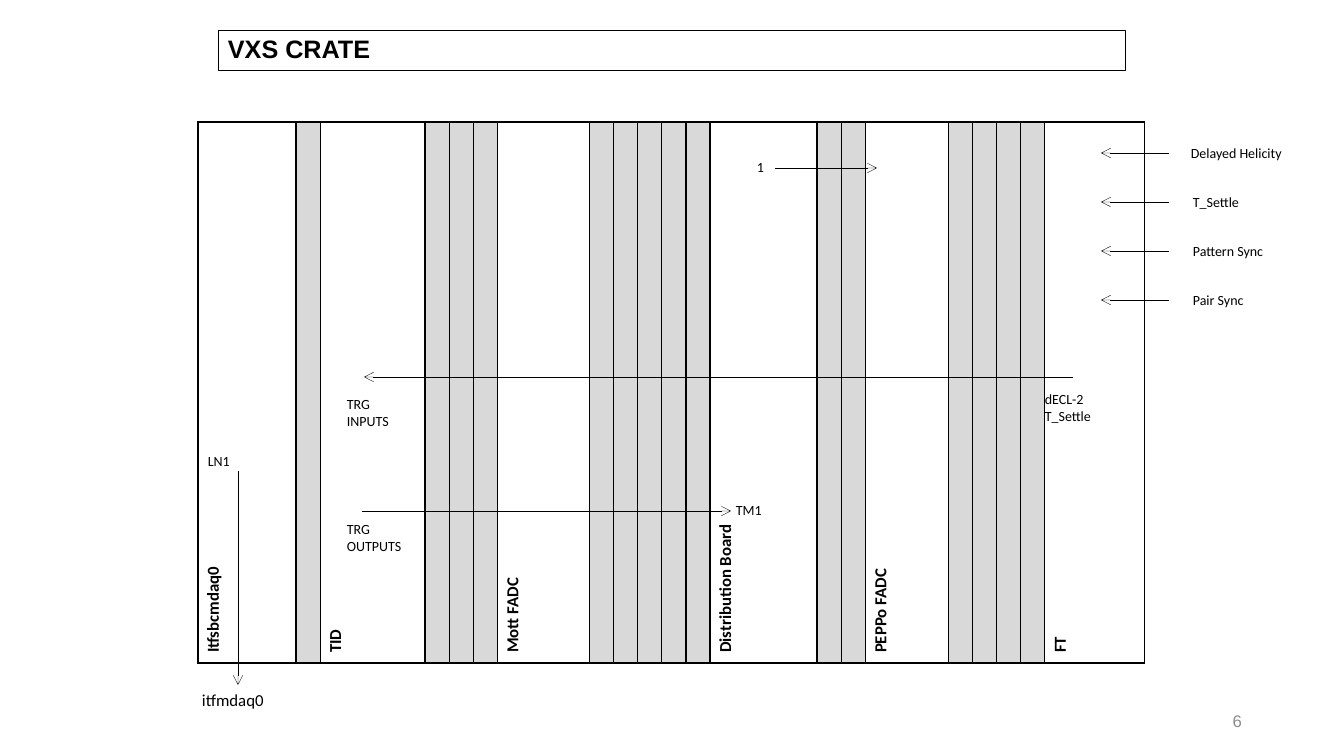
import lxml.etree
import pptx
import pptx.dml.color
import pptx.enum.shapes
import pptx.enum.text
import pptx.oxml.ns
import pptx.util

EMU_PER_PX = 914400 / 100.8
ROW_STEP = 49
SLOT_W = 24
BLACK, GREY, PAGE_GREY = "000000", "D9D9D9", "8C8C8C"
MODULES = [
    ("Itfsbcmdaq0", 98, 1),
    ("TID", 105, 3),
    ("Mott FADC", 92, 5),
    ("Distribution Board", 107, 2),
    ("PEPPo FADC", 83, 4),
    ("FT", 100, 0),
]
HELICITY_SIGNALS = ["Delayed Helicity", "T_Settle", "Pattern Sync", "Pair Sync"]


def px(n):
    """Turn pixels into EMU."""
    return pptx.util.Emu(round(n * EMU_PER_PX))


def color(value):
    """Turn a hex string into a colour."""
    return pptx.dml.color.RGBColor.from_string(value)


def sub(parent, tag, **attrs):
    """Append a DrawingML element to a parent."""
    return lxml.etree.SubElement(parent, pptx.oxml.ns.qn(tag), **attrs)


def add_run(p, text, size, bold=False, font="Calibri", hex_color=BLACK):
    """Add one formatted run to a paragraph."""
    r = p.add_run()
    r.text = text
    r.font.name = font
    r.font.size = pptx.util.Pt(size)
    r.font.bold = bold
    r.font.color.rgb = color(hex_color)


def add_label(s, x, y, w, h, *lines, size=10):
    """Place a text label with one paragraph per line."""
    tf = s.shapes.add_textbox(px(x), px(y), px(w), px(h)).text_frame
    tf.word_wrap = True
    for i, line in enumerate(lines):
        p = tf.add_paragraph() if i else tf.paragraphs[0]
        add_run(p, line, size)


def add_arrow(s, x1, y1, x2, y2):
    """Draw a thin line with an open arrowhead at its end."""
    line = s.shapes.add_connector(
        pptx.enum.shapes.MSO_CONNECTOR.STRAIGHT, px(x1), px(y1), px(x2), px(y2))
    line.line.color.rgb = color(BLACK)
    line.line.width = pptx.util.Pt(0.25)
    sub(line.line._get_or_add_ln(), "a:tailEnd", type="arrow")
    sub(line._element.spPr, "a:effectLst")


def add_title(s, x, y, w, h):
    """Draw the outlined title bar."""
    sp = s.shapes.add_shape(
        pptx.enum.shapes.MSO_SHAPE.RECTANGLE, px(x), px(y), px(w), px(h))
    sp.shadow.inherit = False
    sp.fill.background()
    sp.line.color.rgb = color(BLACK)
    sp.line.width = pptx.util.Pt(0.25)
    tf = sp.text_frame
    tf.word_wrap = True
    tf.vertical_anchor = pptx.enum.text.MSO_ANCHOR.MIDDLE
    p = tf.paragraphs[0]
    p.alignment = pptx.enum.text.PP_ALIGN.LEFT
    p.line_spacing = 0.9
    add_run(p, "VXS CRATE", 18, bold=True, font="Arial")


def style_cell(cell, label):
    """Border a cell, then name a module or shade an empty slot."""
    tcPr = cell._tc.get_or_add_tcPr()
    for side in ("a:lnL", "a:lnR", "a:lnT", "a:lnB"):
        ln = sub(tcPr, side, w=str(pptx.util.Pt(1)))
        sub(sub(ln, "a:solidFill"), "a:srgbClr", val=BLACK)
    if label:
        tcPr.set("vert", "vert270")
        cell.fill.background()
        add_run(cell.text_frame.paragraphs[0], label, 12, bold=True)
    else:
        cell.fill.solid()
        cell.fill.fore_color.rgb = color(GREY)


def add_crate(s, x, y, w, h):
    """Draw the crate as a one-row table of modules and empty slots."""
    columns = []
    for name, width, empty_slots in MODULES:
        columns += [(name, width)] + [("", SLOT_W)] * empty_slots
    table = s.shapes.add_table(1, len(columns), px(x), px(y), px(w), px(h)).table
    table.first_row = False
    table.horz_banding = False
    for i, (label, width) in enumerate(columns):
        table.columns[i].width = px(width)
        style_cell(table.cell(0, i), label)


def add_crate_wiring(s, x, y):
    """Draw the signals between modules, relative to the crate corner."""
    add_arrow(s, x + 40, y + 349, x + 40, y + 563)
    add_label(s, x, y + 326, 50, 27, "LN1")
    add_label(s, x - 6, y + 563, 116, 30, "itfmdaq0", size=12)
    add_arrow(s, x + 164, y + 389, x + 533, y + 389)
    add_label(s, x + 139, y + 394, 76, 44, "TRG OUTPUTS")
    add_label(s, x + 528, y + 375, 67, 27, "TM1")
    add_arrow(s, x + 577, y + 46, x + 679, y + 46)
    add_label(s, x + 549, y + 32, 35, 27, "1")
    add_arrow(s, x + 875, y + 255, x + 166, y + 255)
    add_label(s, x + 139, y + 269, 76, 44, "TRG", "INPUTS")
    add_label(s, x + 837, y + 264, 76, 44, "dECL-2", "T_Settle")


def add_helicity_inputs(s, x, y):
    """Stack the input signals that enter the crate from the right."""
    for i, signal in enumerate(HELICITY_SIGNALS):
        row_y = y + i * ROW_STEP
        add_arrow(s, x + 68, row_y, x, row_y)
        add_label(s, x + (82 if i else 80), row_y - 13, 116, 27, signal)


def add_page_number(s, x, y, w, h):
    """Place the right-aligned page number."""
    tf = s.shapes.add_textbox(px(x), px(y), px(w), px(h)).text_frame
    tf.word_wrap = True
    tf.vertical_anchor = pptx.enum.text.MSO_ANCHOR.MIDDLE
    p = tf.paragraphs[0]
    p.alignment = pptx.enum.text.PP_ALIGN.RIGHT
    add_run(p, "6", 12, font="Arial", hex_color=PAGE_GREY)


def main():
    """Build the slide and save it."""
    prs = pptx.Presentation()
    prs.slide_width, prs.slide_height = px(1344), px(756)
    s = prs.slides.add_slide(prs.slide_layouts[6])
    add_title(s, 218, 30, 907, 40)
    add_crate(s, 198, 122, 945, 541)
    add_crate_wiring(s, 198, 122)
    add_helicity_inputs(s, 1101, 153)
    add_page_number(s, 950, 701, 302, 40)
    prs.save("out.pptx")


if __name__ == "__main__":
    main()
